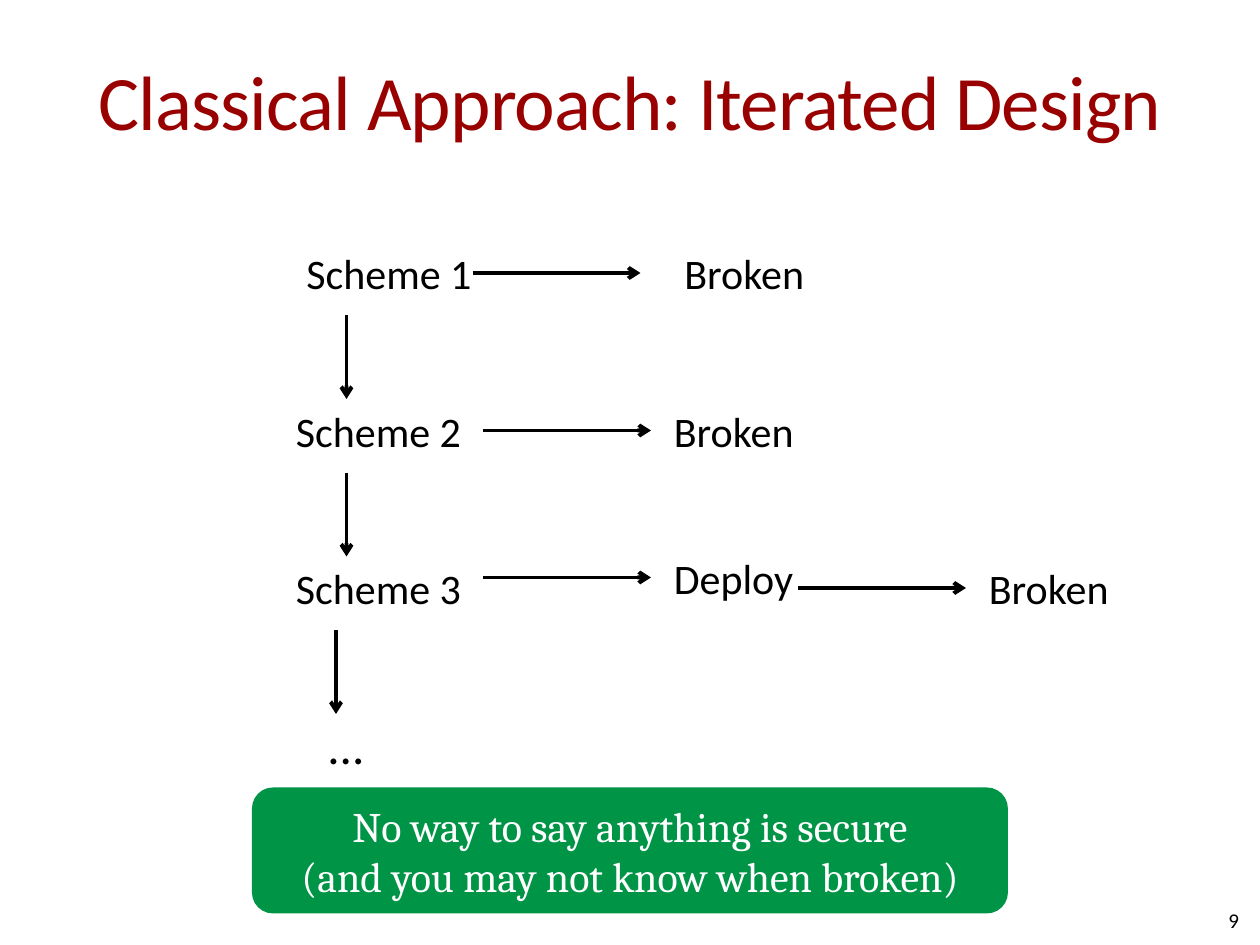
from dataclasses import dataclass

from lxml.etree import SubElement
from pptx import Presentation
from pptx.dml.color import RGBColor
from pptx.enum.shapes import MSO_CONNECTOR, MSO_SHAPE
from pptx.enum.text import MSO_ANCHOR, PP_ALIGN
from pptx.oxml.ns import qn
from pptx.shapes.base import BaseShape
from pptx.slide import Slide
from pptx.util import Emu, Pt

EMU_PER_PX = 7620
BLACK = "000000"
RED = "990000"
GREEN = "009446"
WHITE = "FFFFFF"


@dataclass(frozen=True)
class Label:
    text: str
    left: int
    top: int
    width: int
    height: int
    size: int = 24


@dataclass(frozen=True)
class Arrow:
    left: int
    top: int
    across: int = 0
    down: int = 0


LABELS = [
    Label("Scheme 1", 280, 230, 190, 70),
    Label("Scheme 2", 270, 380, 190, 70),
    Label("Scheme 3", 270, 530, 190, 70),
    Label("...", 300, 676, 70, 70, size=28),
    Label("Broken", 640, 230, 150, 60),
    Label("Broken", 630, 380, 150, 60),
    Label("Deploy", 630, 520, 150, 60),
    Label("Broken", 930, 530, 150, 60),
]
ARROWS = [
    Arrow(450, 260, across=160),
    Arrow(460, 410, across=160),
    Arrow(460, 550, across=160),
    Arrow(760, 560, across=160),
    Arrow(330, 300, down=80),
    Arrow(330, 450, down=80),
    Arrow(320, 600, down=80),
]


def px(length: int) -> Emu:
    return Emu(length * EMU_PER_PX)


def color(value: str) -> RGBColor:
    return RGBColor.from_string(value)


def write(box: BaseShape, text: str, *, size: int, fill: str = BLACK,
          font: str = "Calibri", align: PP_ALIGN = PP_ALIGN.LEFT,
          anchor: MSO_ANCHOR = MSO_ANCHOR.TOP, wrap: bool = True,
          inset_x: int = 0, inset_y: int = 0, spacing: int = 0) -> None:
    frame = box.text_frame
    frame.word_wrap = wrap
    frame.vertical_anchor = anchor
    frame.margin_left = frame.margin_right = px(inset_x)
    frame.margin_top = frame.margin_bottom = px(inset_y)
    para = frame.paragraphs[0]
    para.text = text
    para.alignment = align
    for span in para.runs:
        span.font.name = font
        span.font.size = Pt(size)
        span.font.color.rgb = color(fill)
        if spacing:
            span.font._element.set("spc", str(spacing))


def add_box(page: Slide, left: int, top: int, width: int, height: int) -> BaseShape:
    return page.shapes.add_textbox(px(left), px(top), px(width), px(height))


def draw_label(page: Slide, label: Label) -> None:
    box = add_box(page, label.left, label.top, label.width, label.height)
    write(box, label.text, size=label.size, wrap=False, inset_x=12, inset_y=6)


def draw_arrow(page: Slide, arrow: Arrow) -> None:
    line = page.shapes.add_connector(
        MSO_CONNECTOR.STRAIGHT, px(arrow.left), px(arrow.top),
        px(arrow.left + arrow.across), px(arrow.top + arrow.down))
    line.line.color.rgb = color(BLACK)
    line.line.width = Pt(2.25)
    SubElement(line.line._get_or_add_ln(), qn("a:tailEnd"), type="arrow")
    SubElement(line._element.spPr, qn("a:effectLst"))


def draw_banner(page: Slide) -> None:
    banner = page.shapes.add_shape(
        MSO_SHAPE.ROUNDED_RECTANGLE, px(240), px(750), px(720), px(120))
    banner.shadow.inherit = False
    banner.fill.solid()
    banner.fill.fore_color.rgb = color(GREEN)
    banner.line.fill.background()
    write(banner, "No way to say anything is secure\n(and you may not know when broken)",
          size=24, fill=WHITE, font="Cambria", align=PP_ALIGN.CENTER,
          anchor=MSO_ANCHOR.MIDDLE)


def main() -> None:
    deck = Presentation()
    deck.slide_width, deck.slide_height = px(1200), px(900)
    page = deck.slides.add_slide(deck.slide_layouts[6])
    write(add_box(page, 60, 20, 1080, 150), "Classical Approach: Iterated Design",
          size=44, fill=RED, align=PP_ALIGN.CENTER, anchor=MSO_ANCHOR.MIDDLE,
          inset_y=6, spacing=-50)
    for label in LABELS:
        draw_label(page, label)
    for arrow in ARROWS:
        draw_arrow(page, arrow)
    draw_banner(page)
    write(add_box(page, 900, 852, 280, 48), "9", size=12,
          align=PP_ALIGN.RIGHT, anchor=MSO_ANCHOR.MIDDLE)
    deck.save("out.pptx")


if __name__ == "__main__":
    main()
